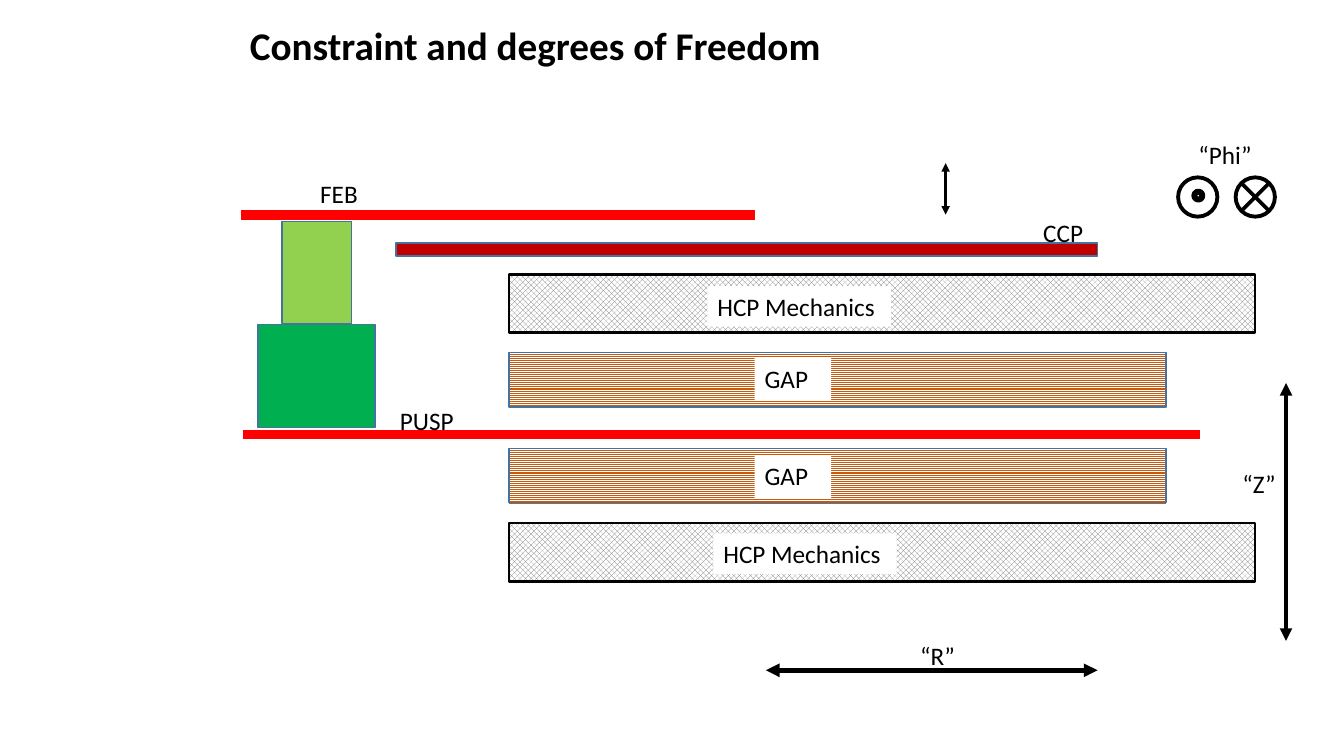
from lxml.etree import SubElement
from pptx import Presentation
from pptx.dml.color import RGBColor
from pptx.enum.dml import MSO_PATTERN
from pptx.enum.shapes import MSO_CONNECTOR, MSO_SHAPE
from pptx.enum.text import MSO_AUTO_SIZE
from pptx.oxml.ns import qn
from pptx.util import Cm, Pt

COLORS = {
    "black": "000000",
    "white": "FFFFFF",
    "gray": "767171",
    "orange": "C55A11",
    "blue": "43739E",
    "red": "FF0000",
    "dark_red": "C00000",
    "light_green": "92D050",
    "green": "00B050",
}
STACK_LEFT = 12.83


def color(name):
    return RGBColor.from_string(COLORS[name])


def add_text(page, text, left, top, width, height=1.02, size=18, bold=False, fill=None):
    box = page.shapes.add_textbox(Cm(left), Cm(top), Cm(width), Cm(height))
    if fill:
        box.fill.solid()
        box.fill.fore_color.rgb = color(fill)
    frame = box.text_frame
    frame.word_wrap = True
    frame.auto_size = MSO_AUTO_SIZE.SHAPE_TO_FIT_TEXT
    span = frame.paragraphs[0].add_run()
    span.text = text
    span.font.name = "Calibri"
    span.font.size = Pt(size)
    span.font.bold = bold
    span.font.color.rgb = color("black")


def add_block(page, left, top, width, height, fill=None, pattern=None,
              line="blue", weight=1, kind=MSO_SHAPE.RECTANGLE):
    block = page.shapes.add_shape(kind, Cm(left), Cm(top), Cm(width), Cm(height))
    block.shadow.inherit = False
    if pattern:
        block.fill.patterned()
        block.fill.pattern = pattern
        block.fill.fore_color.rgb = color(fill)
        block.fill.back_color.rgb = color("white")
    elif fill:
        block.fill.solid()
        block.fill.fore_color.rgb = color(fill)
    else:
        block.fill.background()
    block.line.color.rgb = color(line)
    block.line.width = Pt(weight)


def add_line(page, start, end, weight, line="black", arrows=False):
    connector = page.shapes.add_connector(
        MSO_CONNECTOR.STRAIGHT, *(Cm(value) for value in (*start, *end)))
    connector.line.color.rgb = color(line)
    connector.line.width = Pt(weight)
    if arrows:
        outline = connector.line._get_or_add_ln()
        for tag in ("a:headEnd", "a:tailEnd"):
            SubElement(outline, qn(tag), type="triangle")
    SubElement(connector._element.spPr, qn("a:effectLst"))


def add_symbol(page, left, top, diameter, weight, kind=MSO_SHAPE.OVAL):
    add_block(page, left, top, diameter, diameter, line="black", weight=weight, kind=kind)


def add_detector(page):
    for top in (6.91, 13.18):
        add_block(page, STACK_LEFT, top, 18.8, 1.47, "gray",
                  MSO_PATTERN.OUTLINED_DIAMOND, "black", 2)
    for top in (8.89, 11.3):
        add_block(page, STACK_LEFT, top, 16.56, 1.37, "orange", MSO_PATTERN.LIGHT_HORIZONTAL)
    add_line(page, (6.12, 10.95), (30.23, 10.95), 6, "red")
    add_line(page, (6.07, 5.41), (19.02, 5.41), 7.25, "red")
    add_block(page, 9.98, 6.12, 17.68, 0.33, "dark_red")
    add_block(page, 7.11, 5.59, 1.75, 2.57, "light_green")
    add_block(page, 6.5, 8.18, 2.95, 2.59, "green")


def add_labels(page):
    for text, left, top, width in (
        ("PUSP", 9.83, 10.08, 2.46),
        ("FEB", 7.82, 4.37, 1.68),
        ("CCP", 26.04, 5.36, 2.01),
        ("“R”", 22.94, 16, 1.78),
        ("“Z”", 31.06, 11.68, 1.78),
        ("“Phi”", 29.95, 3.38, 2.11),
    ):
        add_text(page, text, left, top, width)
    for left, top in ((17.83, 7.21), (17.98, 13.44)):
        add_text(page, "HCP Mechanics", left, top, 4.62, fill="white")
    for top in (9.02, 11.48):
        add_text(page, "GAP", 19.02, top, 1.93, 1.07, fill="white")


def add_directions(page):
    for start, end, weight in (
        ((23.83, 5.41), (23.83, 4.11), 2),
        ((19.3, 16.89), (27.66, 16.89), 3.25),
        ((32.41, 16.15), (32.41, 9.65), 3),
    ):
        add_line(page, start, end, weight, arrows=True)
    add_symbol(page, 30.1, 4.83, 0.2, 4.25)
    add_symbol(page, 29.69, 4.47, 0.99, 2.75)
    add_symbol(page, 31.14, 4.47, 0.99, 2.75, MSO_SHAPE.FLOWCHART_SUMMING_JUNCTION)


def main():
    deck = Presentation()
    deck.slide_width, deck.slide_height = Cm(33.87), Cm(19.05)
    page = deck.slides.add_slide(deck.slide_layouts[6])
    add_text(page, "Constraint and degrees of Freedom", 6.05, 0.41, 16.05, 1.45,
             size=28, bold=True)
    add_detector(page)
    add_labels(page)
    add_directions(page)
    deck.save("out.pptx")


if __name__ == "__main__":
    main()
